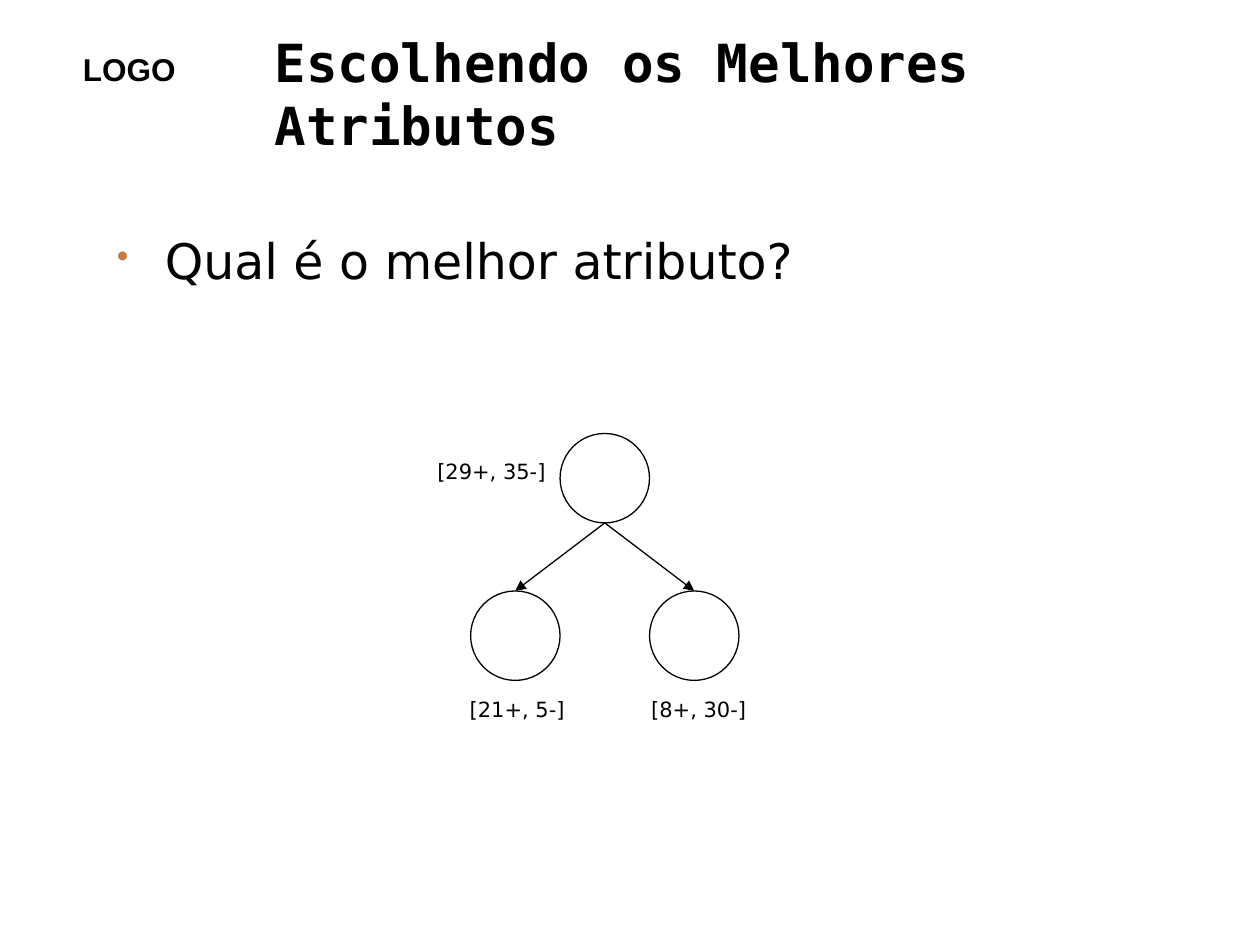
from lxml import etree
from pptx import Presentation
from pptx.dml.color import RGBColor
from pptx.enum.shapes import MSO_CONNECTOR as Connector, MSO_SHAPE as Shape
from pptx.enum.text import MSO_ANCHOR as Anchor, PP_ALIGN as Align
from pptx.oxml.ns import qn
from pptx.util import Inches, Pt

COLORS = {"ink": "000000", "bullet": "C47C40"}

deck = Presentation()
deck.slide_width, deck.slide_height = Inches(10), Inches(7.5)
page = deck.slides.add_slide(deck.slide_layouts[6])


def add_text(text, left, top, width, height, size=12, font="DejaVu Sans",
             bold=False, align=Align.LEFT, anchor=Anchor.TOP, wrap=True, bullet=False):
    box = page.shapes.add_textbox(Inches(left), Inches(top), Inches(width), Inches(height))
    frame = box.text_frame
    frame.word_wrap = wrap
    frame.vertical_anchor = anchor
    para = frame.paragraphs[0]
    para.alignment = align
    if bullet:
        props = para._p.get_or_add_pPr()
        props.set("marL", str(Inches(0.38)))
        props.set("indent", str(-Inches(0.38)))
        color = etree.SubElement(props, qn("a:buClr"))
        etree.SubElement(color, qn("a:srgbClr"), val=COLORS["bullet"])
        etree.SubElement(props, qn("a:buSzPct"), val="70000")
        etree.SubElement(props, qn("a:buChar"), char="•")
    span = para.add_run()
    span.text = text
    span.font.name = font
    span.font.size = Pt(size)
    span.font.bold = bold
    span.font.color.rgb = RGBColor.from_string(COLORS["ink"])


def draw_outline(line):
    line.color.rgb = RGBColor.from_string(COLORS["ink"])
    line.width = Pt(0.75)


# Header and question
add_text("LOGO", 0.56, 0.35, 0.94, 0.4, size=18, font="Arial", bold=True, wrap=False)
add_text("Escolhendo os Melhores Atributos", 2.08, 0.25, 7.42, 0.97, size=30,
         font="DejaVu Sans Mono", bold=True, anchor=Anchor.MIDDLE)
add_text("Qual é o melhor atributo?", 0.83, 1.78, 8.27, 4.49, size=28, bullet=True)

# Tree nodes: the root, then its two children one diameter to either side
DIAMETER = 0.71
ROOT_X, ROOT_Y, CHILD_Y = 4.8, 3.44, 4.69
nodes = []
for center, top in [(ROOT_X, ROOT_Y), (ROOT_X - DIAMETER, CHILD_Y), (ROOT_X + DIAMETER, CHILD_Y)]:
    node = page.shapes.add_shape(Shape.OVAL, Inches(center - DIAMETER / 2), Inches(top),
                                 Inches(DIAMETER), Inches(DIAMETER))
    node.shadow.inherit = False
    node.fill.background()
    draw_outline(node.line)
    nodes.append(node)

# Branches from the bottom of the root to the top of each child
root, *children = nodes
for child in children:
    branch = page.shapes.add_connector(Connector.STRAIGHT, Inches(ROOT_X), root.top + root.height,
                                       child.left + child.width // 2, child.top)
    branch.end_connect(child, 0)
    draw_outline(branch.line)
    etree.SubElement(branch.line._get_or_add_ln(), qn("a:tailEnd"), type="triangle")
    etree.SubElement(branch._element.spPr, qn("a:effectLst"))

# Class counts
for counts, left, top, width in [("[29+, 35-]", 3.34, 3.59, 1.12),
                                 ("[8+, 30-]", 5.04, 5.48, 1.01),
                                 ("[21+, 5-]", 3.6, 5.48, 1.01)]:
    add_text(counts, left, top, width, 0.3, align=Align.CENTER, wrap=False)

deck.save("out.pptx")
